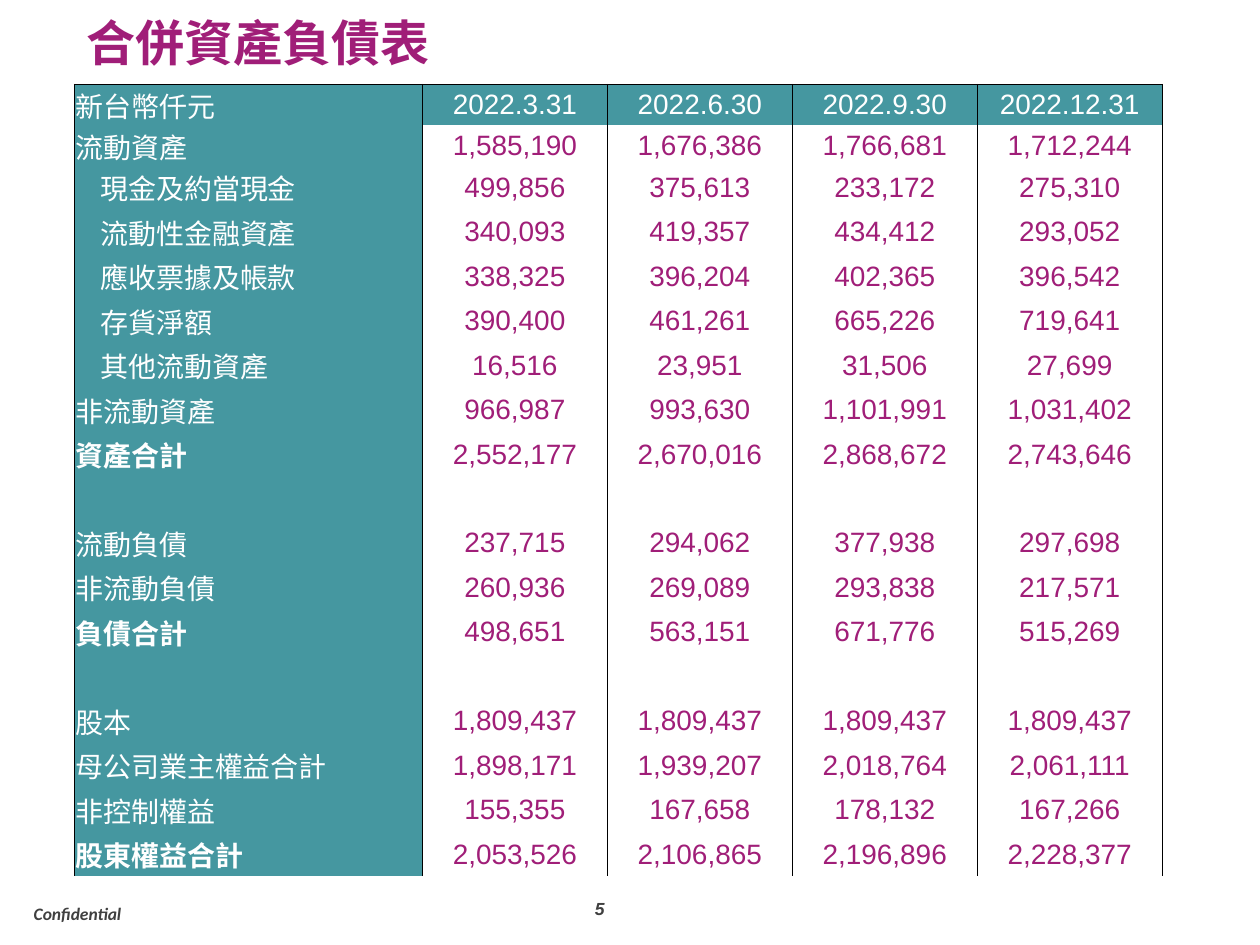
from lxml import etree
from pptx import Presentation
from pptx.dml.color import RGBColor
from pptx.enum import text
from pptx.oxml import ns
from pptx.util import Pt

HUES = {"teal": "4597A0", "plum": "A01E78", "white": "FFFFFF",
        "gray": "404040", "black": "000000"}
CJK, LATIN = "Noto Sans CJK SC", "Arial"
NO_GRID = "{2D5ABB26-0587-4C30-8999-92F81FD0307C}"

TITLE = "合併資產負債表"
HEAD = ("新台幣仟元", "2022.3.31", "2022.6.30", "2022.9.30", "2022.12.31")
# Kinds: "item", "sub" (indented), "sum" (bold label), "gap" (empty row)
ROWS = [
    ("item", "流動資產", "1,585,190", "1,676,386", "1,766,681", "1,712,244"),
    ("sub", "現金及約當現金", "499,856", "375,613", "233,172", "275,310"),
    ("sub", "流動性金融資產", "340,093", "419,357", "434,412", "293,052"),
    ("sub", "應收票據及帳款", "338,325", "396,204", "402,365", "396,542"),
    ("sub", "存貨淨額", "390,400", "461,261", "665,226", "719,641"),
    ("sub", "其他流動資產", "16,516", "23,951", "31,506", "27,699"),
    ("item", "非流動資產", "966,987", "993,630", "1,101,991", "1,031,402"),
    ("sum", "資產合計", "2,552,177", "2,670,016", "2,868,672", "2,743,646"),
    ("gap", "", "", "", "", ""),
    ("item", "流動負債", "237,715", "294,062", "377,938", "297,698"),
    ("item", "非流動負債", "260,936", "269,089", "293,838", "217,571"),
    ("sum", "負債合計", "498,651", "563,151", "671,776", "515,269"),
    ("gap", "", "", "", "", ""),
    ("item", "股本", "1,809,437", "1,809,437", "1,809,437", "1,809,437"),
    ("item", "母公司業主權益合計", "1,898,171", "1,939,207", "2,018,764", "2,061,111"),
    ("item", "非控制權益", "155,355", "167,658", "178,132", "167,266"),
    ("sum", "股東權益合計", "2,053,526", "2,106,865", "2,196,896", "2,228,377"),
]

LEFT, TOP = 42.5, 48.2
WIDTHS = [198.9] + [105.7] * 4
HEIGHTS = [23.04] * 2 + [25.4] * 16


def write(para, words, size, face, hue, bold=False, slant=False):
    run = para.add_run()
    run.text = words
    font = run.font
    font.size, font.name = Pt(size), face
    font.bold, font.italic = bold, slant
    font.color.rgb = RGBColor.from_string(HUES[hue])
    if face == CJK:
        east = etree.SubElement(run._r.get_or_add_rPr(), ns.qn("a:ea"))
        east.set("typeface", face)


def label(slide, area, words, size, face, hue, mid=False, center=False,
          slant=False):
    frame = slide.shapes.add_textbox(*map(Pt, area)).text_frame
    frame.word_wrap = True
    if mid:
        frame.vertical_anchor = text.MSO_ANCHOR.MIDDLE
    para = frame.paragraphs[0]
    if center:
        para.alignment = text.PP_ALIGN.CENTER
    write(para, words, size, face, hue, True, slant)


def rule(cell, sides):
    """Draw thin black borders on the given sides, in schema order."""
    props = cell._tc.get_or_add_tcPr()
    for spot, side in enumerate(sides):
        line = etree.Element(ns.qn("a:ln" + side), w=str(Pt(0.5)))
        fill = etree.SubElement(line, ns.qn("a:solidFill"))
        etree.SubElement(fill, ns.qn("a:srgbClr"), val=HUES["black"])
        props.insert(spot, line)


def fill_cell(cell, kind, col, words):
    first, head = col == 0, kind == "head"
    cell.margin_left = Pt(15 if first and kind == "sub" else 0.72)
    cell.margin_right = cell.margin_top = Pt(0.72)
    cell.margin_bottom = Pt(0)
    cell.vertical_anchor = text.MSO_ANCHOR.MIDDLE
    if first or head:
        cell.fill.solid()
        cell.fill.fore_color.rgb = RGBColor.from_string(HUES["teal"])
    else:
        cell.fill.background()
    rule(cell, "LRT" if head else "LR")
    if words:
        para = cell.text_frame.paragraphs[0]
        if not first:
            para.alignment = text.PP_ALIGN.CENTER
        write(para, words, 16, CJK if first else LATIN,
              "white" if first or head else "plum",
              first and kind == "sum")


def add_sheet(slide):
    """Add the balance sheet table."""
    rows = [("head", *HEAD)] + ROWS
    table = slide.shapes.add_table(
        len(rows), len(HEAD), Pt(LEFT), Pt(TOP),
        Pt(sum(WIDTHS)), Pt(sum(HEIGHTS))).table
    table.first_row = table.horz_banding = False
    table._tbl.tblPr.find(ns.qn("a:tableStyleId")).text = NO_GRID
    for col, width in zip(table.columns, WIDTHS):
        col.width = Pt(width)
    for at, (kind, *cells) in enumerate(rows):
        table.rows[at].height = Pt(HEIGHTS[at])
        for col, words in enumerate(cells):
            fill_cell(table.cell(at, col), kind, col, words)


def main():
    deck = Presentation()
    deck.slide_width, deck.slide_height = Pt(720), Pt(540)
    slide = deck.slides.add_slide(deck.slide_layouts[6])
    label(slide, (12.2, 512.6, 655, 17.3), "Confidential", 10, "Calibri",
          "gray", slant=True)
    label(slide, (18, 509.8, 649.5, 17.3), "5", 10, LATIN, "gray",
          center=True, slant=True)
    label(slide, (LEFT, 0, 614.2, 48.2), TITLE, 28, CJK, "plum", mid=True)
    add_sheet(slide)
    deck.save("out.pptx")


if __name__ == "__main__":
    main()
